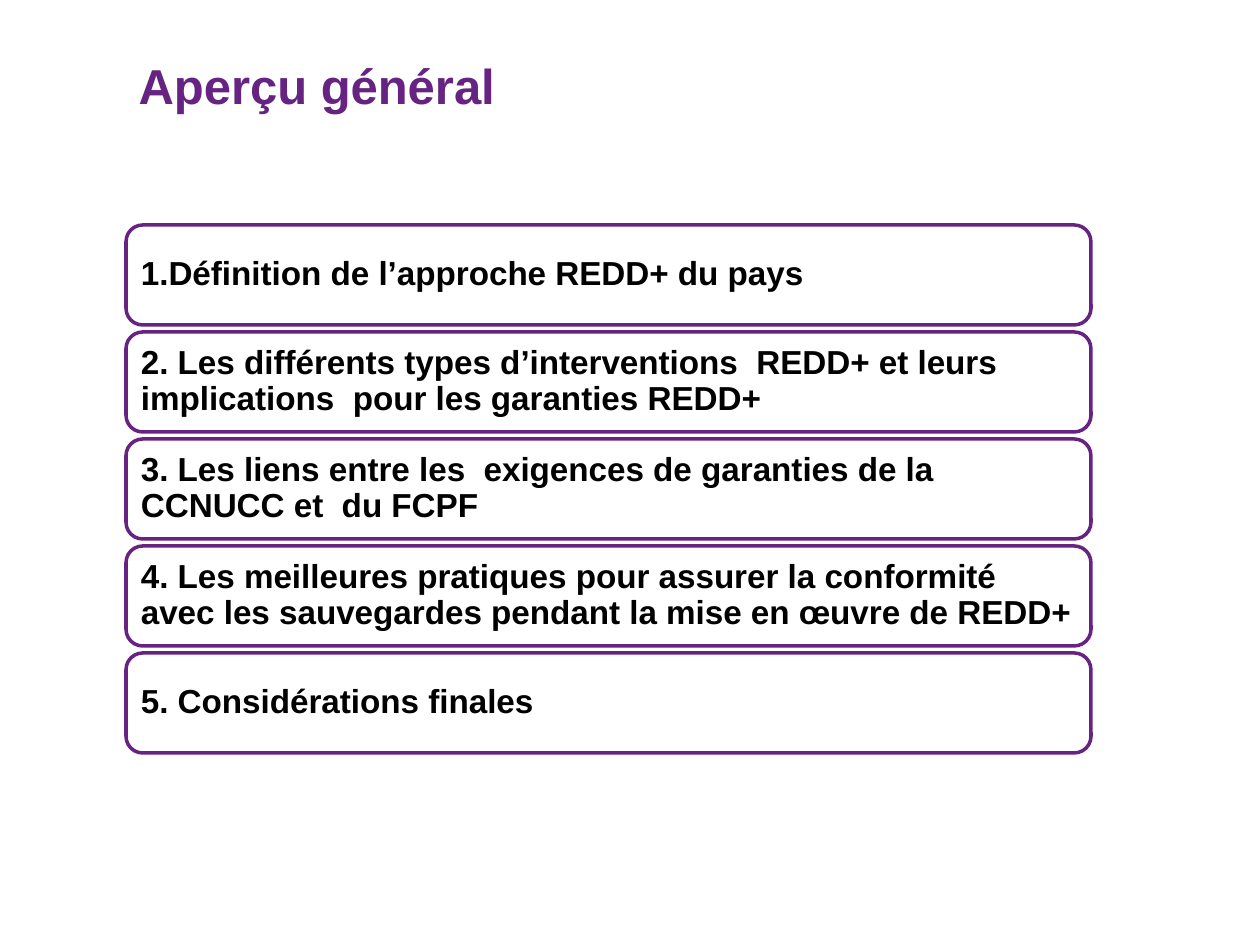
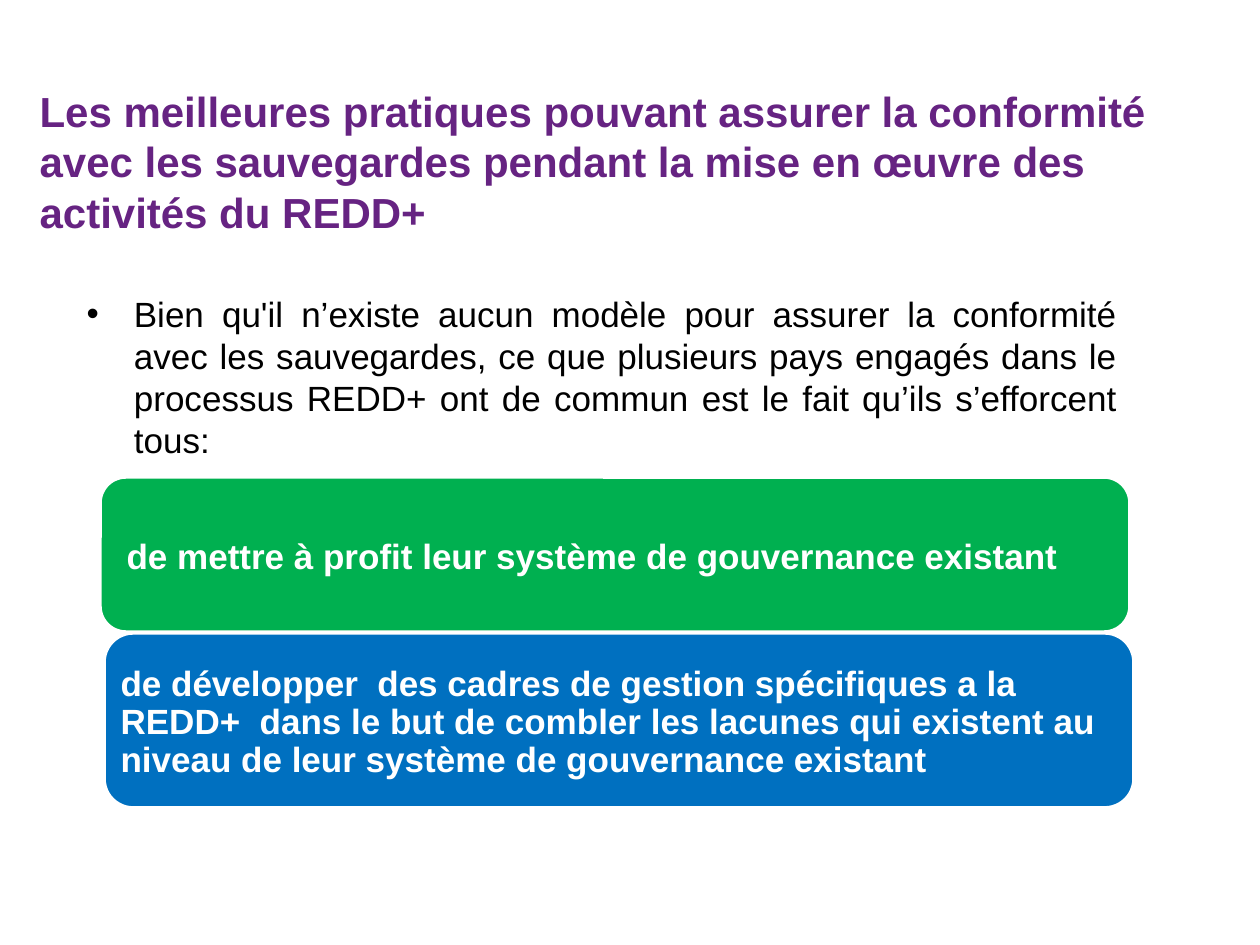
"""Build two slides on REDD+ safeguards: an overview and the good practices."""
from pptx import Presentation
from pptx.dml.color import RGBColor
from pptx.enum.shapes import MSO_SHAPE as Shape
from pptx.enum.text import MSO_ANCHOR as Anchor, MSO_AUTO_SIZE as AutoSize, PP_ALIGN as Align
from pptx.util import Emu, Pt

OVERVIEW = "Aperçu général"
TOPICS = [
    "1.Définition de l’approche REDD+ du pays",
    "2. Les différents types d’interventions  REDD+ et leurs implications  pour les garanties REDD+",
    "3. Les liens entre les  exigences de garanties de la CCNUCC et  du FCPF",
    "4. Les meilleures pratiques pour assurer la conformité avec les sauvegardes pendant la mise en œuvre de REDD+",
    "5. Considérations finales",
]
PRACTICES = ("Les meilleures pratiques pouvant assurer la conformité avec les sauvegardes "
             "pendant la mise en œuvre des activités du REDD+")
CONTEXT = ("Bien qu'il n’existe aucun modèle pour assurer la conformité avec les sauvegardes, "
           "ce que plusieurs pays engagés dans le processus REDD+ ont de commun est le fait "
           "qu’ils s’efforcent tous:")
EFFORTS = [
    ("de mettre à profit leur système de gouvernance existant",
     "00B050", (100, 477, 1030, 155), (19, 18, 8, 10)),
    ("de développer  des cadres de gestion spécifiques a la REDD+  dans le but de combler "
     "les lacunes qui existent au niveau de leur système de gouvernance existant",
     "0070C0", (104, 633, 1030, 175), (8, 16, 8, 10)),
]

PURPLE, WHITE, BLACK = "662382", "FFFFFF", "000000"
FONT = "Arial"
TITLE_ONLY, TITLE_AND_BODY = 5, 1
TOPIC_LEFT, TOPIC_TOP, TOPIC_WIDTH, TOPIC_HEIGHT, TOPIC_PITCH = 126, 225, 965, 100, 107
TOPIC_INSETS = (10, 10, 8, 10)


def px(length):
    return Emu(round(length * 914400 / 126))


def color(code):
    return RGBColor.from_string(code)


def write(frame, text, size, code, bold=True, align=Align.LEFT):
    frame.text = text
    frame.word_wrap = True
    frame.auto_size = AutoSize.NONE
    paragraph = frame.paragraphs[0]
    paragraph.alignment = align
    paragraph.space_before = Pt(0)
    font = paragraph.font
    font.name, font.size, font.bold = FONT, Pt(size), bold
    font.color.rgb = color(code)
    return paragraph


def fill_placeholder(holder, text, box, size, code, **style):
    holder.left, holder.top, holder.width, holder.height = map(px, box)
    write(holder.text_frame, text, size, code, **style)
    holder.text_frame.vertical_anchor = Anchor.TOP


def add_card(slide, text, box, insets, size, fill, line, ink):
    card = slide.shapes.add_shape(Shape.ROUNDED_RECTANGLE, *map(px, box))
    card.shadow.inherit = False
    card.fill.solid()
    card.fill.fore_color.rgb = color(fill)
    card.line.color.rgb = color(line)
    card.line.width = Pt(2)
    frame = card.text_frame
    write(frame, text, size, ink).line_spacing = 0.9
    frame.vertical_anchor = Anchor.MIDDLE
    frame.margin_left, frame.margin_top, frame.margin_right, frame.margin_bottom = map(px, insets)


def add_slide(deck, layout, title, box, size):
    slide = deck.slides.add_slide(deck.slide_layouts[layout])
    fill_placeholder(slide.shapes.title, title, box, size, PURPLE)
    return slide


def build_overview(deck):
    slide = add_slide(deck, TITLE_ONLY, OVERVIEW, (126, 49, 653, 72), 28)
    for row, topic in enumerate(TOPICS):
        box = (TOPIC_LEFT, TOPIC_TOP + row * TOPIC_PITCH, TOPIC_WIDTH, TOPIC_HEIGHT)
        add_card(slide, topic, box, TOPIC_INSETS, 19, WHITE, PURPLE, BLACK)


def build_practices(deck):
    slide = add_slide(deck, TITLE_AND_BODY, PRACTICES, (27, 79, 1179, 165), 24)
    fill_placeholder(slide.placeholders[1], CONTEXT, (74, 286, 1056, 184), 20, BLACK,
                     bold=False, align=Align.JUSTIFY)
    for effort, fill, box, insets in EFFORTS:
        add_card(slide, effort, box, insets, 20, fill, WHITE, WHITE)


def main():
    deck = Presentation()
    deck.slide_width, deck.slide_height = px(1260), px(945)
    build_overview(deck)
    build_practices(deck)
    deck.save("out.pptx")


if __name__ == "__main__":
    main()
